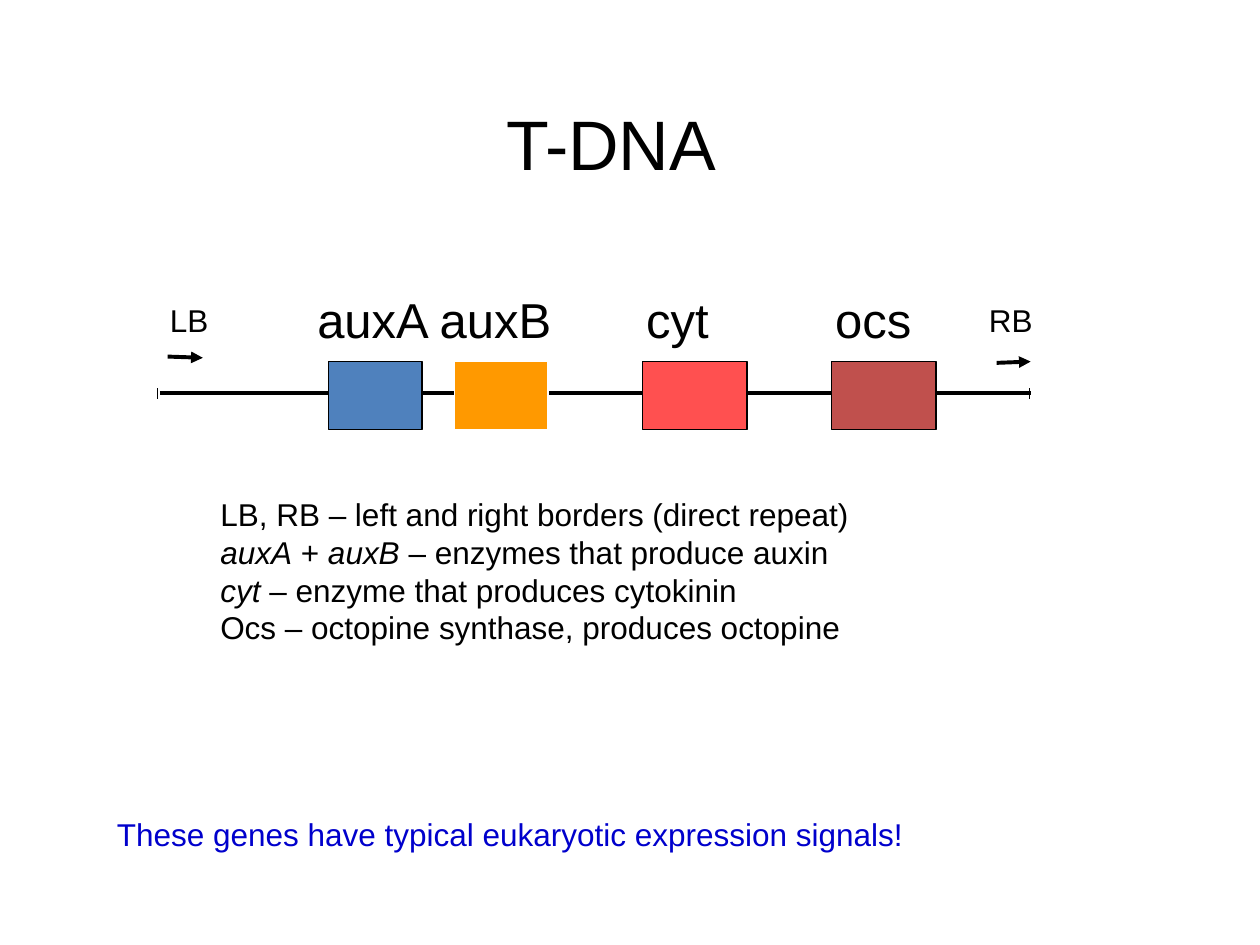
from dataclasses import dataclass
from lxml import etree
from pptx import Presentation
from pptx.dml.color import RGBColor
from pptx.enum.shapes import MSO_CONNECTOR as CONN, MSO_SHAPE as SHAPE
from pptx.oxml.ns import qn
from pptx.util import Inches, Pt


@dataclass(frozen=True)
class Theme:
    font: str = "Arial"
    black: str = "000000"
    white: str = "FFFFFF"
    note: str = "0000CC"
    aux_a: str = "4F81BD"
    aux_b: str = "FF9900"
    cyt: str = "FF5050"
    ocs: str = "C0504D"
    title: int = 40
    gene: int = 28
    body: int = 18
    thick: float = 2.25
    thin: float = 0.75


T = Theme()


def rgb(color):
    return RGBColor.from_string(color)


def add_text(s, box, lines, size=T.body, color=T.black, tabs=()):
    tf = s.shapes.add_textbox(*map(Inches, box)).text_frame
    tf.word_wrap = bool(tabs)
    for i, runs in enumerate(lines):
        p = tf.paragraphs[0] if i == 0 else tf.add_paragraph()
        if tabs:
            tab_list = etree.SubElement(p._p.get_or_add_pPr(), qn("a:tabLst"))
            for pos in tabs:
                etree.SubElement(tab_list, qn("a:tab"), pos=str(Inches(pos)), algn="l")
        for text, italic in runs:
            r = p.add_run()
            r.text = text
            r.font.name = T.font
            r.font.size = Pt(size)
            r.font.italic = italic
            r.font.color.rgb = rgb(color)


def add_line(s, x1, y1, x2, y2, width, arrow=False):
    line = s.shapes.add_connector(CONN.STRAIGHT, *map(Inches, (x1, y1, x2, y2)))
    line.line.color.rgb = rgb(T.black)
    line.line.width = Pt(width)
    if arrow:
        etree.SubElement(line.line._get_or_add_ln(), qn("a:tailEnd"), type="triangle")
    etree.SubElement(line._element.spPr, qn("a:effectLst"))


def add_gene(s, x, y, w, h, fill, outline):
    sp = s.shapes.add_shape(SHAPE.RECTANGLE, *map(Inches, (x, y, w, h)))
    sp.shadow.inherit = False
    sp.fill.solid()
    sp.fill.fore_color.rgb = rgb(fill)
    sp.line.color.rgb = rgb(outline)
    sp.line.width = Pt(T.thin)


def add_gene_map(s, x, y, w, h):
    axis = y + 0.87
    add_line(s, x + 0.02, axis, x + w, axis, T.thick)
    add_line(s, x + 0.08, y + 0.58, x + 0.36, y + 0.59, T.thick, arrow=True)
    add_line(s, x + w - 0.27, y + 0.63, x + w, y + 0.62, T.thick, arrow=True)

    genes = [
        (1.36, 0.74, T.aux_a, T.black),
        (2.36, 0.74, T.aux_b, T.white),
        (3.85, 0.83, T.cyt, T.black),
        (5.35, 0.83, T.ocs, T.black),
    ]
    gene_h = 0.54
    for dx, gene_w, fill, outline in genes:
        add_gene(s, x + dx, y + h - gene_h, gene_w, gene_h, fill, outline)

    add_text(s, (x + 1.17, y, 5.1, 0.57), [[("auxA auxB\tcyt\tocs", False)]],
             T.gene, tabs=(2.61, 4.11))
    for label, dx, label_w in (("LB", 0, 0.61), ("RB", 6.5, 0.66)):
        add_text(s, (x + dx, y + 0.09, label_w, 0.5), [[(label, False)]])
    for end in (x, x + w - 0.01):
        add_line(s, end, axis - 0.04, end, axis + 0.05, T.thin)


def add_legend(s, x, y, w, h):
    lines = [
        [("LB, RB – left and right borders (direct repeat)", False)],
        [("auxA", True), (" + ", False), ("auxB", True),
         (" – enzymes that produce auxin", False)],
        [("cyt", True), (" – enzyme that produces cytokinin", False)],
        [("Ocs – octopine synthase, produces octopine", False)],
    ]
    add_text(s, (x, y, w, h), lines)


def add_title(s, x, y, w, h):
    add_text(s, (x, y, w, h), [[("T-DNA", False)]], T.title)


def add_note(s, x, y, w, h):
    note = "These genes have typical eukaryotic expression signals!"
    add_text(s, (x, y, w, h), [[(note, False)]], color=T.note)


def main():
    prs = Presentation()
    prs.slide_width, prs.slide_height = Inches(10), Inches(7.5)
    s = prs.slides.add_slide(prs.slide_layouts[6])
    add_gene_map(s, 1.25, 2.25, 6.93, 1.16)
    add_legend(s, 1.65, 3.88, 6.85, 1.7)
    add_title(s, 3.92, 0.75, 1.98, 0.77)
    add_note(s, 0.83, 6.42, 8.53, 0.5)
    prs.save("out.pptx")


if __name__ == "__main__":
    main()
